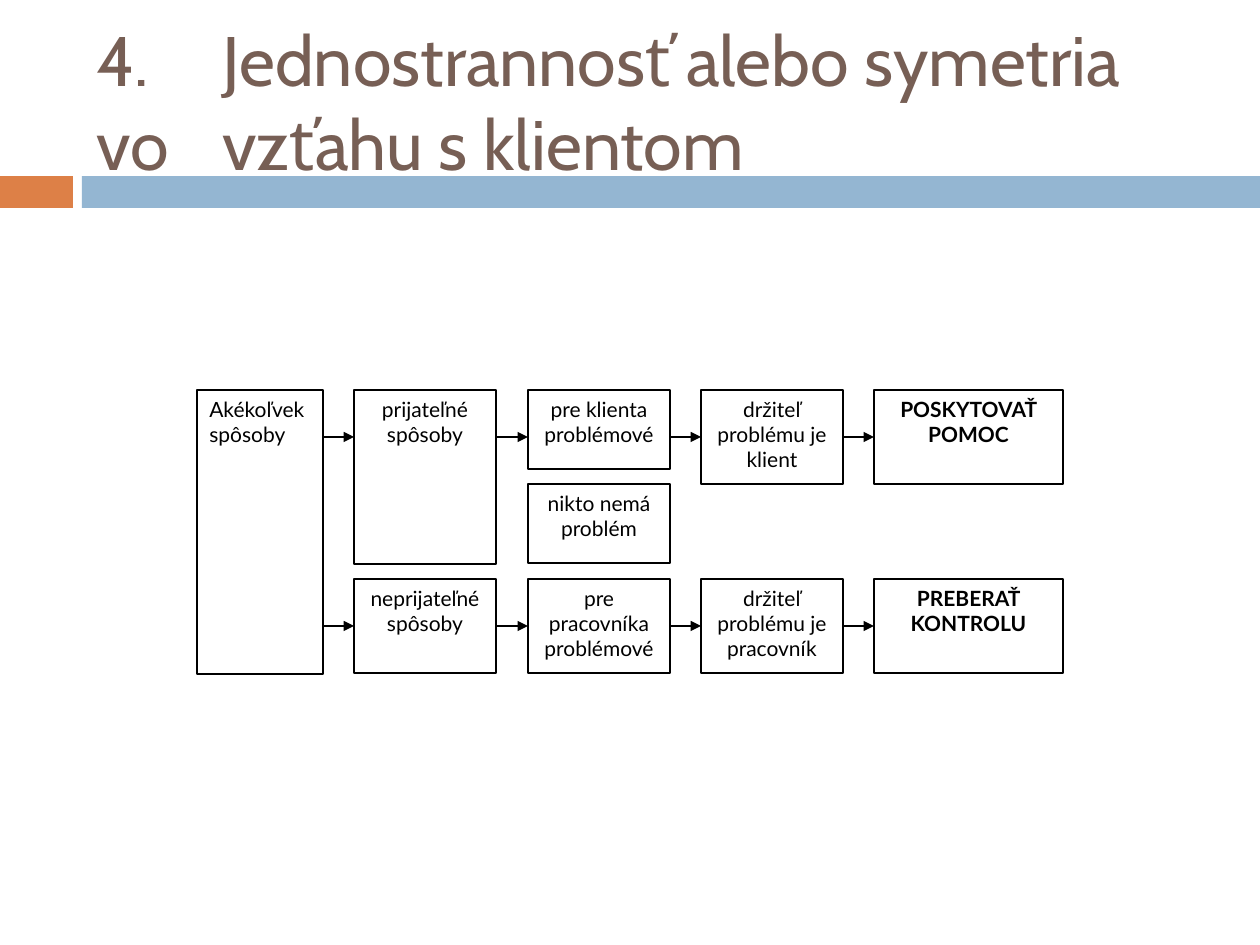
from dataclasses import dataclass
from pptx import Presentation
from pptx import util as u
from pptx.dml.color import RGBColor
from pptx.enum import shapes, text
from pptx.oxml import ns
from lxml import etree

SCALE = 914400 / 126
INK = "000000"
PAPER = "FFFFFF"
LEFT, CENTER = text.PP_ALIGN.LEFT, text.PP_ALIGN.CENTER
COLS = (197, 354, 528, 701, 874)
TOP, MID, LOW = 390, 484, 579
TALL = 94


@dataclass
class Box:
    x: int
    y: int
    w: int
    h: int
    words: str
    bold: bool = False
    align: text.PP_ALIGN = CENTER


def px(n: float) -> u.Emu:
    return u.Emu(round(n * SCALE))


def tint(code: str) -> RGBColor:
    return RGBColor.from_string(code)


def write(para, words: str, font: str, size: int, color: str, bold: bool = False) -> None:
    run = para.add_run()
    run.text = words
    run.font.name = font
    run.font.size = u.Pt(size)
    run.font.bold = bold
    run.font.color.rgb = tint(color)


def rect(slide, x: int, y: int, w: int, h: int, fill: str):
    shape = slide.shapes.add_shape(
        shapes.MSO_SHAPE.RECTANGLE, px(x), px(y), px(w), px(h))
    shape.shadow.inherit = False
    shape.fill.solid()
    shape.fill.fore_color.rgb = tint(fill)
    shape.line.fill.background()
    return shape


def draw(slide, box: Box):
    shape = rect(slide, box.x, box.y, box.w, box.h, PAPER)
    shape.line.color.rgb = tint(INK)
    shape.line.width = u.Pt(0.75)
    frame = shape.text_frame
    frame.word_wrap = True
    frame.vertical_anchor = text.MSO_ANCHOR.TOP
    para = frame.paragraphs[0]
    para.alignment = box.align
    write(para, box.words, "Lato", 12, INK, box.bold)
    return shape


def link(slide, a: Box, b: Box, y: int, made: dict) -> None:
    line = slide.shapes.add_connector(
        shapes.MSO_CONNECTOR.STRAIGHT, px(a.x + a.w), px(y), px(b.x), px(y))
    if 2 * y == 2 * a.y + a.h:
        line.begin_connect(made[a.words], 3)
    if 2 * y == 2 * b.y + b.h:
        line.end_connect(made[b.words], 1)
    line.line.color.rgb = tint(INK)
    line.line.width = u.Pt(0.75)
    etree.SubElement(line.line._get_or_add_ln(), ns.qn("a:tailEnd"), type="triangle")
    etree.SubElement(line._element.spPr, ns.qn("a:effectLst"))


def head(slide) -> None:
    title = slide.shapes.title
    title.left, title.top, title.width, title.height = map(px, (84, 32, 1124, 136))
    frame = title.text_frame
    frame.word_wrap = True
    frame.auto_size = text.MSO_AUTO_SIZE.NONE
    frame.vertical_anchor = text.MSO_ANCHOR.MIDDLE
    para = frame.paragraphs[0]
    para.alignment = LEFT
    para._p.get_or_add_pPr().set("defTabSz", str(u.Inches(1)))
    write(para, "4.\tJednostrannosť alebo symetria vo \tvzťahu s klientom",
          "Cabin", 40, "775F55")


def main() -> None:
    deck = Presentation()
    deck.slide_width, deck.slide_height = px(1260), px(945)
    slide = deck.slides.add_slide(deck.slide_layouts[5])
    rect(slide, 0, 176, 73, 32, "DD8047")
    rect(slide, 82, 176, 1178, 32, "94B6D2")
    head(slide)

    root = Box(COLS[0], TOP, 126, 284, "Akékoľvek spôsoby", align=LEFT)
    upper = [
        root,
        Box(COLS[1], TOP, 142, 174, "prijateľné spôsoby"),
        Box(COLS[2], TOP, 142, 79, "pre klienta problémové"),
        Box(COLS[3], TOP, 142, TALL, "držiteľ problému je klient"),
        Box(COLS[4], TOP, 189, TALL, "POSKYTOVAŤ POMOC", True),
    ]
    lower = [
        root,
        Box(COLS[1], LOW, 142, TALL, "neprijateľné spôsoby"),
        Box(COLS[2], LOW, 142, TALL, "pre pracovníka problémové"),
        Box(COLS[3], LOW, 142, TALL, "držiteľ problému je pracovník"),
        Box(COLS[4], LOW, 189, TALL, "PREBERAŤ KONTROLU", True),
    ]
    none = Box(COLS[2], MID, 142, 79, "nikto nemá problém")
    made = {box.words: draw(slide, box) for box in (*upper, none, *lower[1:])}
    for row, top in ((upper, TOP), (lower, LOW)):
        for a, b in zip(row, row[1:]):
            link(slide, a, b, top + TALL // 2, made)
    deck.save("out.pptx")


if __name__ == "__main__":
    main()
